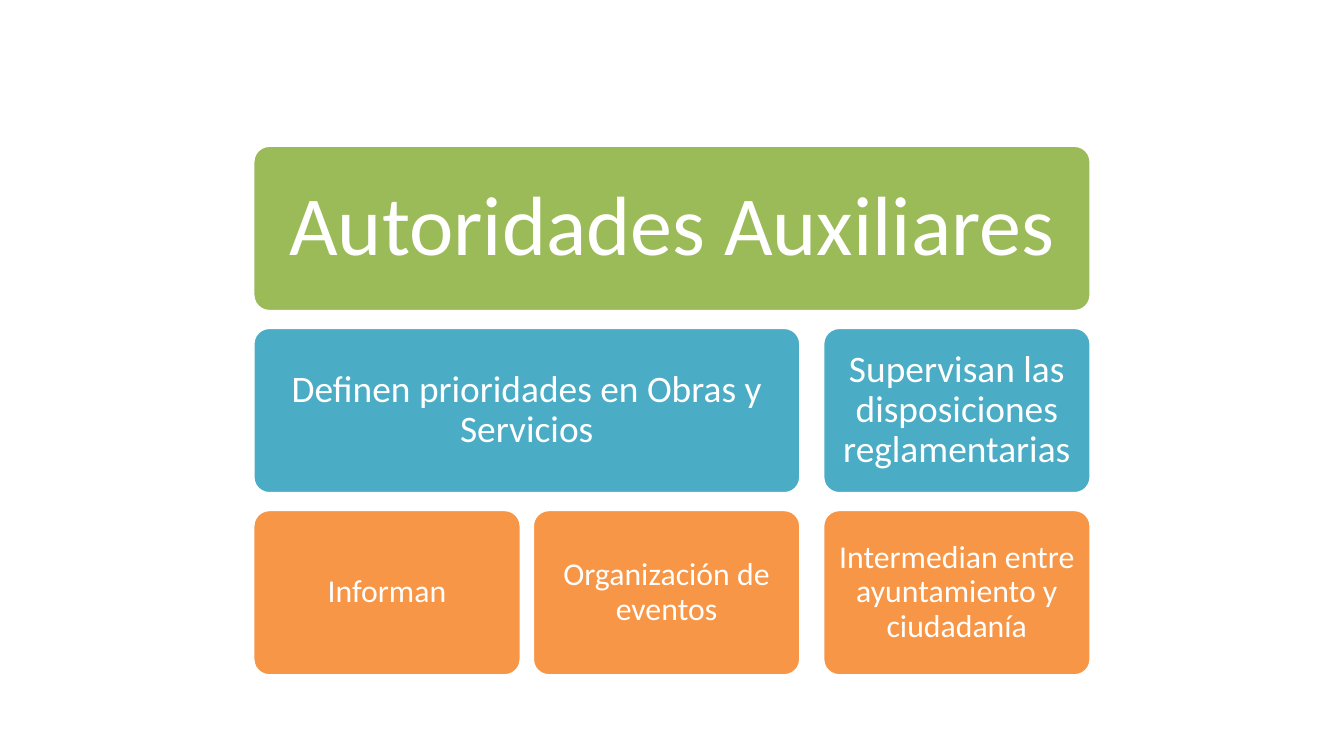
from pptx import Presentation
from pptx.dml.color import RGBColor
from pptx.enum.shapes import MSO_SHAPE
from pptx.enum.text import MSO_ANCHOR, PP_ALIGN
from pptx.util import Inches, Pt

ROUNDED = MSO_SHAPE.ROUNDED_RECTANGLE
MIDDLE = MSO_ANCHOR.MIDDLE
CENTER = PP_ALIGN.CENTER

WHITE = RGBColor(0xFF, 0xFF, 0xFF)
GREEN = RGBColor(0x9B, 0xBB, 0x59)
TEAL = RGBColor(0x4B, 0xAC, 0xC6)
ORANGE = RGBColor(0xF7, 0x96, 0x46)

SLIDE_WIDTH = 10
SLIDE_HEIGHT = SLIDE_WIDTH * 9 / 16
COLUMN_LEFTS = (1.88, 3.96, 6.12)
COLUMN_WIDTH = 2
FIRST_TOP, LAST_TOP = 1.08, 3.79
ROW_HEIGHT = 1.24

# Each level: fill, text size, inset, blocks as (first column, last column, text)
LEVELS = (
    (GREEN, 45, 0.19, ((0, 2, "Autoridades Auxiliares"),)),
    (TEAL, 20, 0.08, (
        (0, 1, "Definen prioridades en Obras y Servicios"),
        (2, 2, "Supervisan las disposiciones reglamentarias"),
    )),
    (ORANGE, 17, 0.07, (
        (0, 0, "Informan"),
        (1, 1, "Organización de eventos"),
        (2, 2, "Intermedian entre ayuntamiento y ciudadanía"),
    )),
)
ROW_PITCH = (LAST_TOP - FIRST_TOP) / (len(LEVELS) - 1)


def write_text(frame, text, *, size, inset, color=WHITE, font="Calibri"):
    frame.word_wrap = True
    frame.vertical_anchor = MIDDLE
    frame.margin_left = frame.margin_right = Inches(inset)
    frame.margin_top = frame.margin_bottom = Inches(inset)
    paragraph = frame.paragraphs[0]
    paragraph.alignment = CENTER
    paragraph.line_spacing = 0.9
    run = paragraph.add_run()
    run.text = text
    run.font.name = font
    run.font.size = Pt(size)
    run.font.color.rgb = color


class HierarchySlide:
    border_color = WHITE
    border_width = Pt(2)
    corner = 0.1

    def __init__(self, slide):
        self.slide = slide

    def block(self, row, first, last, text, fill, size, inset):
        """Draw a block in a row, spanning the columns first to last."""
        left = COLUMN_LEFTS[first]
        width = COLUMN_LEFTS[last] + COLUMN_WIDTH - left
        top = FIRST_TOP + row * ROW_PITCH
        block = self.slide.shapes.add_shape(
            ROUNDED, Inches(left), Inches(top), Inches(width), Inches(ROW_HEIGHT))
        block.adjustments[0] = self.corner
        block.shadow.inherit = False
        block.fill.solid()
        block.fill.fore_color.rgb = fill
        block.line.color.rgb = self.border_color
        block.line.width = self.border_width
        write_text(block.text_frame, text, size=size, inset=inset)


def main():
    presentation = Presentation()
    presentation.slide_width = Inches(SLIDE_WIDTH)
    presentation.slide_height = Inches(SLIDE_HEIGHT)
    blank = presentation.slide_layouts[6]
    hierarchy = HierarchySlide(presentation.slides.add_slide(blank))
    for row, (fill, size, inset, blocks) in enumerate(LEVELS):
        for first, last, text in blocks:
            hierarchy.block(row, first, last, text, fill, size, inset)
    presentation.save("out.pptx")


if __name__ == "__main__":
    main()
